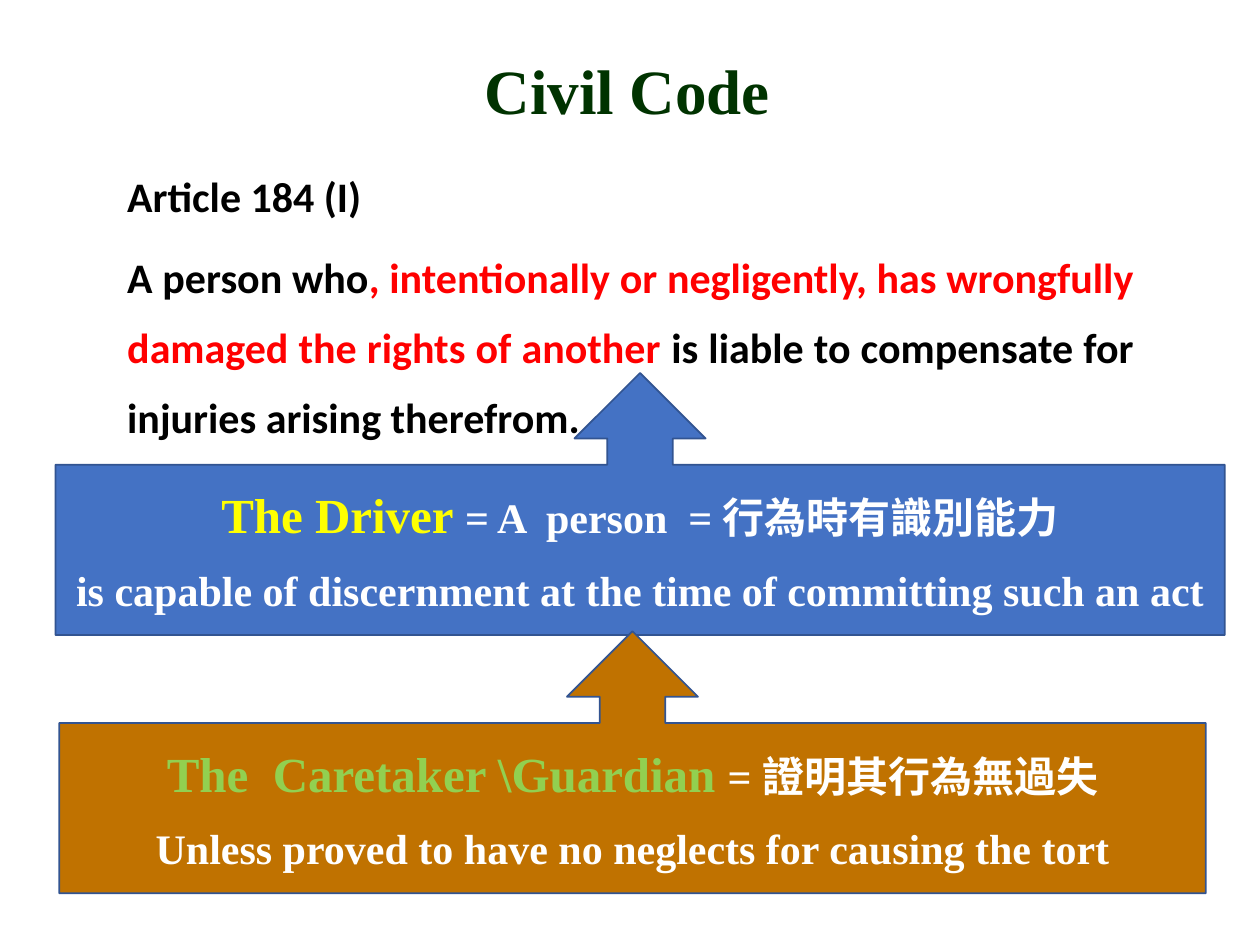
from lxml import etree
from pptx import Presentation
from pptx.dml.color import RGBColor
from pptx.enum import shapes, text
from pptx.oxml.ns import qn
from pptx.util import Inches, Pt

SERIF, SANS, CJK = "Times New Roman", "Calibri", "Noto Sans CJK JP"


def color(value):
    return RGBColor.from_string(value)


def add_run(paragraph, wording, size, font, ink):
    run = paragraph.add_run()
    run.text = wording
    run.font.size = Pt(size)
    run.font.name = font
    run.font.bold = True
    run.font.color.rgb = color(ink)
    if font == CJK:
        etree.SubElement(run.font._element, qn("a:ea"), typeface=font)


prs = Presentation()
prs.slide_width, prs.slide_height = Inches(10), Inches(7.5)
slide = prs.slides.add_slide(prs.slide_layouts[1])

heading = slide.shapes.title
heading.left, heading.top = Inches(0.67), Inches(0.21)
heading.width, heading.height = Inches(8.62), Inches(1.07)
heading.text_frame.vertical_anchor = text.MSO_ANCHOR.MIDDLE
heading_line = heading.text_frame.paragraphs[0]
heading_line.alignment = text.PP_ALIGN.CENTER
heading_line.line_spacing = 0.9
add_run(heading_line, "Civil Code", 36, SERIF, "003300")

article = slide.placeholders[1]
article.left, article.top = Inches(0.91), Inches(1.15)
article.width, article.height = Inches(8.19), Inches(6.51)
provisions = [
    [("Article 184 (I)", "000000")],
    [
        ("A person who", "000000"),
        (", intentionally or negligently, has wrongfully damaged the rights of another ", "FF0000"),
        ("is liable to compensate for injuries arising therefrom.", "000000"),
    ],
]
for i, provision in enumerate(provisions):
    frame = article.text_frame
    clause = frame.add_paragraph() if i else frame.paragraphs[0]
    properties = clause._p.get_or_add_pPr()
    properties.set("marL", "0")
    properties.set("indent", "0")
    etree.SubElement(properties, qn("a:buNone"))
    clause.alignment = text.PP_ALIGN.JUSTIFY
    clause.line_spacing = Pt(40)
    clause.space_before = Pt(6 if i else 0)
    for wording, ink in provision:
        add_run(clause, wording, 24, SANS, ink)

parties = [
    (0.44, 2.96, 9.28, "4472C4", [
        [
            ("The Driver ", 28, SERIF, "FFFF00"),
            ("= A  person  = ", 24, SERIF, "FFFFFF"),
            ("行為時有識別能力", 24, CJK, "FFFFFF"),
        ],
        [("is capable of discernment at the time of committing such an act", 24, SERIF, "FFFFFF")],
    ]),
    (0.47, 5.01, 9.1, "C07200", [
        [
            ("The  Caretaker \\Guardian ", 28, SERIF, "92D050"),
            ("= ", 24, SERIF, "FFFFFF"),
            ("證明其行為無過失", 24, CJK, "FFFFFF"),
        ],
        [("Unless proved to have no neglects for causing the tort", 24, SERIF, "FFFFFF")],
    ]),
]
for left, top, width, fill, statements in parties:
    party = slide.shapes.add_shape(
        shapes.MSO_SHAPE.UP_ARROW_CALLOUT, Inches(left), Inches(top), Inches(width), Inches(2.08)
    )
    party.shadow.inherit = False
    party.fill.solid()
    party.fill.fore_color.rgb = color(fill)
    party.line.color.rgb = color("325491")
    party.line.width = Pt(1)
    frame = party.text_frame
    frame.word_wrap = True
    frame.vertical_anchor = text.MSO_ANCHOR.MIDDLE
    for i, statement in enumerate(statements):
        sentence = frame.add_paragraph() if i else frame.paragraphs[0]
        sentence.alignment = text.PP_ALIGN.CENTER
        sentence.space_before = Pt(12 if i else 0)
        for wording, size, font, ink in statement:
            add_run(sentence, wording, size, font, ink)

prs.save("out.pptx")
